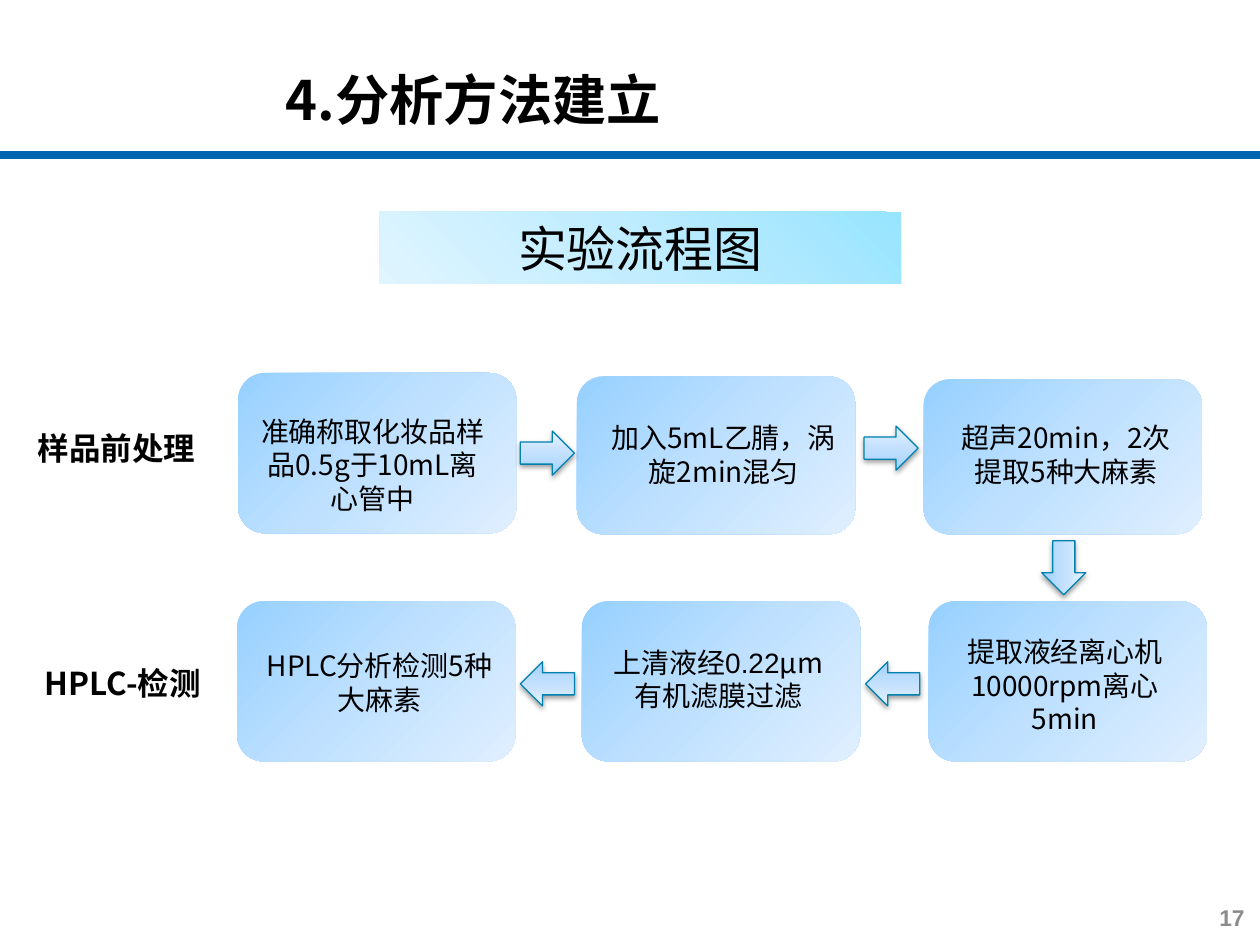
import lxml.etree
import pptx
import pptx.dml.color
import pptx.enum.shapes
import pptx.enum.text
import pptx.oxml.ns
import pptx.util

Cm, Pt = pptx.util.Cm, pptx.util.Pt
qn = pptx.oxml.ns.qn
SHAPE = pptx.enum.shapes.MSO_SHAPE
ALIGN = pptx.enum.text.PP_ALIGN
MIDDLE = pptx.enum.text.MSO_ANCHOR.MIDDLE
rgb = pptx.dml.color.RGBColor.from_string
CJK = "Noto Sans CJK SC"


def write(tf, lines, size, align=ALIGN.CENTER, bold=False, font=CJK, color="000000"):
    """Fill a text frame; a line is a string or a list of (text, font) runs."""
    tf.word_wrap = True
    for i, line in enumerate(lines):
        p = tf.add_paragraph() if i else tf.paragraphs[0]
        p.alignment = align
        p.font.size, p.font.bold, p.font.name = Pt(size), bold, font
        p.font.color.rgb = rgb(color)
        lxml.etree.SubElement(p._p.pPr.find(qn("a:defRPr")), qn("a:ea"), typeface=CJK)
        for text, name in [(line, None)] if isinstance(line, str) else line:
            r = p.add_run()
            r.text = text
            if name:
                r.font.name = name


def add_gradient_shape(kind, box, stops, angle):
    """Add a borderless shape; stops are (percent, colour), angle is clockwise."""
    sp = s.shapes.add_shape(kind, *map(Cm, box))
    sp.shadow.inherit = False
    sp.line.fill.background()
    sp.fill.gradient()
    sp.fill.gradient_angle = 360 - angle
    gs_list = sp._element.spPr.find(qn("a:gradFill")).find(qn("a:gsLst"))
    for gs in list(gs_list):
        gs_list.remove(gs)
    for percent, color in stops:
        gs = lxml.etree.SubElement(gs_list, qn("a:gs"), pos=str(percent * 1000))
        lxml.etree.SubElement(gs, qn("a:srgbClr"), val=color)
    return sp


prs = pptx.Presentation()
prs.slide_width, prs.slide_height = Cm(25.4), Cm(19.05)
s = prs.slides.add_slide(prs.slide_layouts[5])

# Title and rule
title = s.shapes.title
title.left, title.top, title.width, title.height = map(Cm, (5.51, 1.12, 18.44, 1.73))
title.text_frame.auto_size = pptx.enum.text.MSO_AUTO_SIZE.NONE
title.text_frame.vertical_anchor = MIDDLE
write(title.text_frame, ["4.分析方法建立"], 31, ALIGN.LEFT, bold=True)

rule = s.shapes.add_connector(pptx.enum.shapes.MSO_CONNECTOR.STRAIGHT,
                              0, Cm(3.12), Cm(25.5), Cm(3.12))
rule.line.color.rgb = rgb("0065B0")
rule.line.width = Pt(4.5)
lxml.etree.SubElement(rule._element.spPr, qn("a:effectLst"))

# Heading banner
banner = add_gradient_shape(SHAPE.RECTANGLE, (7.65, 4.27, 10.52, 1.45),
                            [(0, "97E4FF"), (50, "BFECFF"), (100, "DFF5FF")], 135)
write(banner.text_frame, ["实验流程图"], 28)

# Step boxes: left, top, height
step_stops = [(0, "96D0FF"), (50, "BFE1FF"), (100, "E0EFFF")]
for left, top, height in [(4.8, 7.52, 3.23), (11.63, 7.59, 3.18), (18.62, 7.65, 3.12),
                          (4.78, 12.12, 3.23), (11.73, 12.12, 3.23), (18.72, 12.12, 3.23)]:
    add_gradient_shape(SHAPE.ROUNDED_RECTANGLE, (left, top, 5.61, height), step_stops, 45)

# Step texts
steps = [
    ((4.95, 8.23, 5.13, 2.31), ["准确称取化妆品样品0.5g于10mL离心管中"]),
    ((11.91, 8.36, 5.36, 1.63), ["加入5mL乙腈，涡", "旋2min混匀"]),
    ((18.97, 8.36, 5.05, 1.63), ["超声20min，2次提取5种大麻素"]),
    ((19.02, 12.67, 4.9, 2.31), ["提取液经离心机", "10000rpm离心5min"]),
    ((12.04, 12.88, 4.88, 1.63),
     [[("上清液经0.22", "Arial"), ("μm有机", CJK), ("滤膜过滤", "Arial")]]),
    ((4.93, 12.95, 5.44, 1.63), ["HPLC分析检测5种大麻素"]),
]
for box, lines in steps:
    write(s.shapes.add_textbox(*map(Cm, box)).text_frame, lines, 16)

# Row labels
for box, text, align in [((0.51, 8.53, 4.72, 1.02), "样品前处理", ALIGN.LEFT),
                         ((-0.28, 13.26, 5.51, 1.02), "HPLC-检测", ALIGN.CENTER)]:
    write(s.shapes.add_textbox(*map(Cm, box)).text_frame, [text], 18, align, bold=True)

# Arrows between steps: left, top, rotation
arrow_stops = [(0, "9CCFFF"), (35, "BADCFD"), (100, "E4F1FF")]
for left, top, rotation in [(10.49, 8.69, 0), (17.42, 8.59, 0), (20.9, 11, 90),
                            (17.45, 13.34, 180), (10.49, 13.34, 180)]:
    arrow = add_gradient_shape(SHAPE.RIGHT_ARROW, (left, top, 1.09, 0.89), arrow_stops, 270)
    arrow.rotation = rotation
    arrow.line.color.rgb = rgb("0081B0")
    arrow.line.width = Pt(0.75)
    effects = arrow._element.spPr.find(qn("a:effectLst"))
    shadow = lxml.etree.SubElement(effects, qn("a:outerShdw"), blurRad=str(Pt(3.1)),
                                   dist=str(Pt(1.6)), dir="5400000", rotWithShape="0")
    black = lxml.etree.SubElement(shadow, qn("a:srgbClr"), val="000000")
    lxml.etree.SubElement(black, qn("a:alpha"), val="38000")

# Page number
tf = s.shapes.add_textbox(Cm(21.51), Cm(17.98), Cm(3.86), Cm(1.04)).text_frame
tf.vertical_anchor = MIDDLE
tf.margin_left = tf.margin_right = Cm(0.28)
tf.margin_top = tf.margin_bottom = Cm(0.15)
write(tf, ["17"], 13, ALIGN.RIGHT, bold=True, font="Arial", color="8C8C8C")

prs.save("out.pptx")
